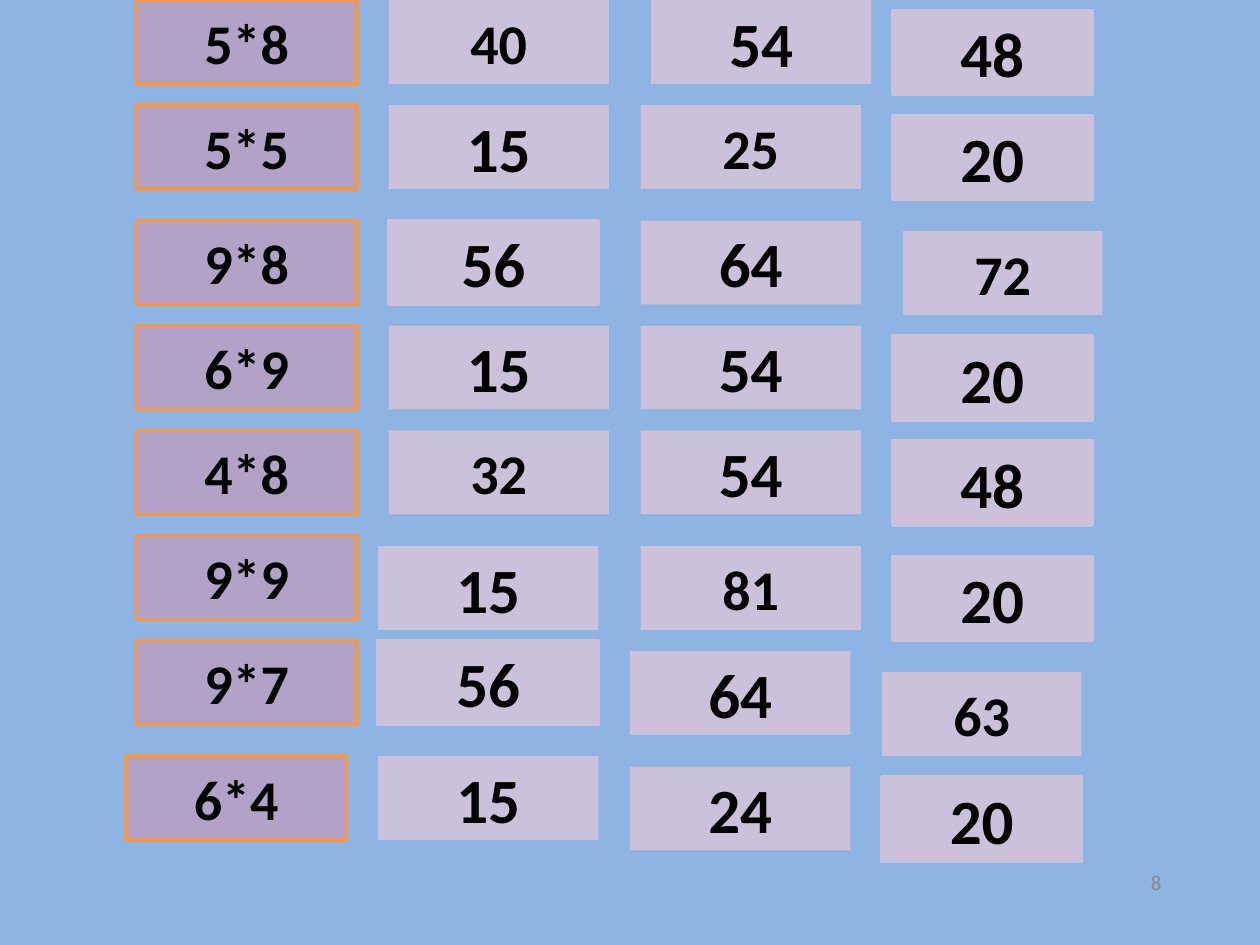
from pptx import Presentation
from pptx.dml.color import RGBColor
from pptx.enum.shapes import MSO_SHAPE
from pptx.enum.text import MSO_ANCHOR, PP_ALIGN
from pptx.util import Inches, Pt

THEME = {
    "font": "Calibri",
    "background": RGBColor.from_string("8EB4E3"),
    "question": RGBColor.from_string("B3A2C7"),
    "answer": RGBColor.from_string("CCC1DA"),
    "border": RGBColor.from_string("F79646"),
    "text": RGBColor.from_string("000000"),
    "number": RGBColor.from_string("898989"),
    "normal": Pt(32),
    "large": Pt(36),
    "small": Pt(12),
}

deck = Presentation()
deck.slide_width, deck.slide_height = Inches(10), Inches(7.5)
page = deck.slides.add_slide(deck.slide_layouts[6])
page.background.fill.solid()
page.background.fill.fore_color.rgb = THEME["background"]

# Grid of 120 columns by 90 rows
COLUMN, ROW = deck.slide_width / 120, deck.slide_height / 90


def place(left, top, width, height):
    return int(left * COLUMN), int(top * ROW), int(width * COLUMN), int(height * ROW)


def write(box, text, size, color, align, bold):
    box.text_frame.word_wrap = True
    box.text_frame.vertical_anchor = MSO_ANCHOR.MIDDLE
    para = box.text_frame.paragraphs[0]
    para.alignment = align
    span = para.add_run()
    span.text = text
    span.font.name = THEME["font"]
    span.font.size = size
    span.font.bold = bold
    span.font.color.rgb = color


CARD_LEFTS = [13, 37, 61, 85]
CARD_WIDTHS = [21, 21, 21, 19]
CARD_HEIGHT = 8
OUTLINED = {"48", "20", "56"}
NORMAL_SIZE = {"40", "25", "72", "32", "81", "63"}

# Row top, then the question and its three answers
EXERCISES = [
    (0, ["5*8", "40", "54", "48"]),
    (10, ["5*5", "15", "25", "20"]),
    (21, ["9*8", "56", "64", "72"]),
    (31, ["6*9", "15", "54", "20"]),
    (41, ["4*8", "32", "54", "48"]),
    (51, ["9*9", "15", "81", "20"]),
    (61, ["9*7", "56", "64", "63"]),
    (72, ["6*4", "15", "24", "20"]),
]

# Cards off the grid: (row, column) -> shift right, shift down, extra width
NUDGES = {
    (0, 2): (1, 0, 0),
    (2, 1): (0, 0, -1), (2, 3): (1, 1, 0),
    (5, 1): (-1, 1, 0), (5, 2): (0, 1, 0), (5, 3): (0, 2, 0),
    (6, 1): (-1, 0, 0), (6, 2): (-1, 1, 0), (6, 3): (-1, 3, 0),
    (7, 0): (-1, 0, 0), (7, 1): (-1, 0, 0), (7, 2): (-1, 1, 0), (7, 3): (-1, 2, 0),
}

# Question and answer cards
for row, (top, texts) in enumerate(EXERCISES):
    for column, text in enumerate(texts):
        is_question = column == 0
        usual = (0, 1, 0) if column == 3 else (0, 0, 0)
        right, down, wider = NUDGES.get((row, column), usual)
        card = page.shapes.add_shape(MSO_SHAPE.RECTANGLE, *place(
            CARD_LEFTS[column] + right, top + down, CARD_WIDTHS[column] + wider, CARD_HEIGHT))
        card.shadow.inherit = False
        card.fill.solid()
        card.fill.fore_color.rgb = THEME["question" if is_question else "answer"]
        if is_question or text in OUTLINED:
            card.line.color.rgb = THEME["border" if is_question else "answer"]
            card.line.width = Pt(2)
        else:
            card.line.fill.background()
        size = THEME["normal" if is_question or text in NORMAL_SIZE else "large"]
        write(card, text, size, THEME["text"], PP_ALIGN.CENTER, True)

# Page number
number = page.shapes.add_textbox(*place(84, 81.5, 27.8, 5))
write(number, "8", THEME["small"], THEME["number"], PP_ALIGN.RIGHT, False)

deck.save("out.pptx")
